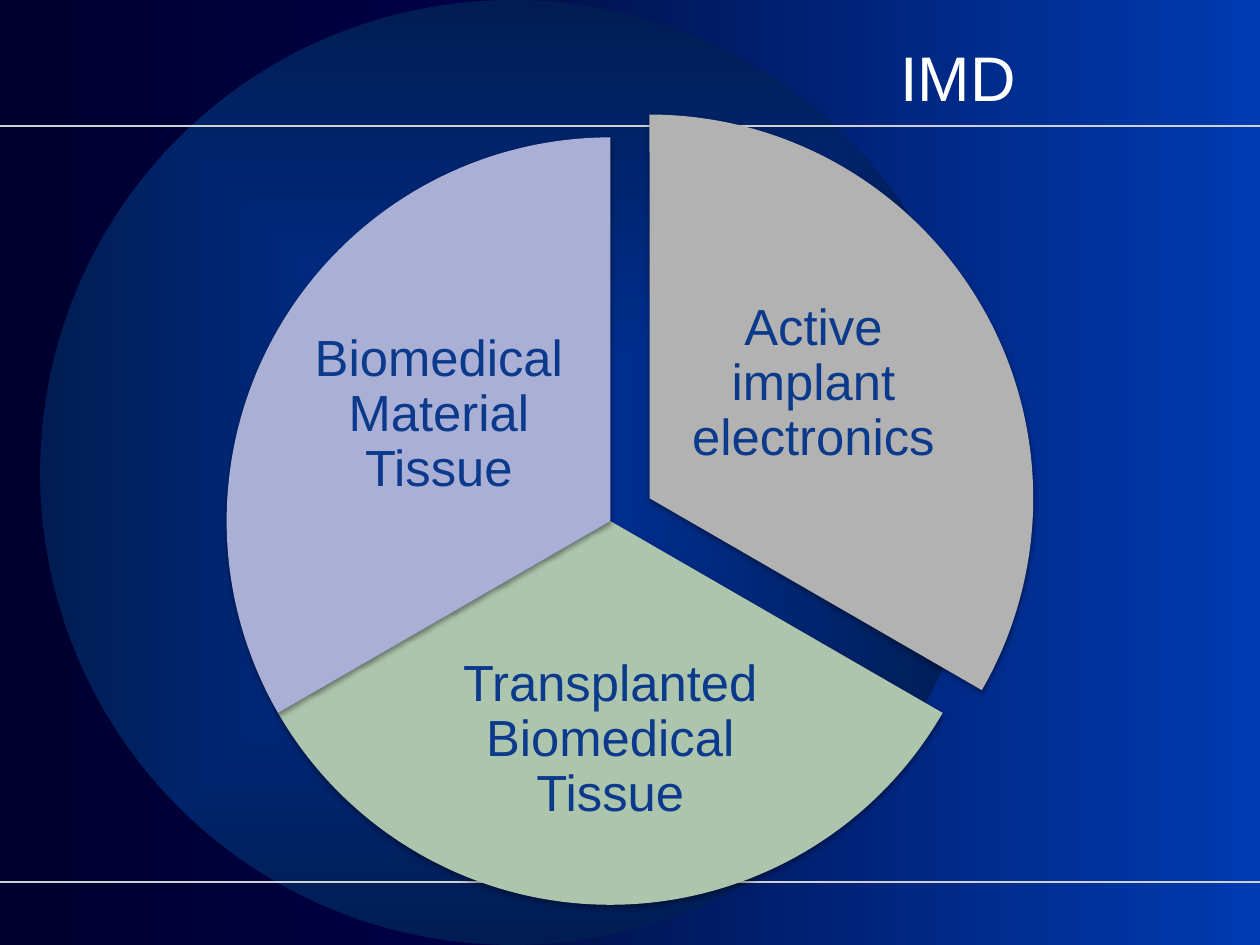
from lxml import etree
from pptx import Presentation
from pptx.dml.color import RGBColor
from pptx.enum import shapes, text
from pptx.oxml import ns, parse_xml
from pptx.util import Cm, Pt

COLORS = {
    "night_start": "00002E", "night_end": "000072",
    "band_start": "00104A", "band_end": "003BB2",
    "disc_core": "0033A0", "disc_rim": "001C52",
    "rule": "D1D1D1", "title": "FFFFFF", "label": "0B398B",
    "grey": "B2B2B2", "green": "ADC5AD", "lilac": "AAAFD5",
}
SHADOW = (
    f'<a:effectLst {ns.nsdecls("a")}>'
    '<a:outerShdw blurRad="39370" dist="20320" dir="5400000" rotWithShape="0">'
    '<a:srgbClr val="000000"><a:alpha val="38000"/></a:srgbClr>'
    '</a:outerShdw></a:effectLst>'
)
CENTRE_GRADIENT = (
    f'<a:path {ns.nsdecls("a")} path="shape">'
    '<a:fillToRect l="50000" t="50000" r="50000" b="50000"/></a:path>'
)


def color(name):
    """Return the named colour."""
    return RGBColor.from_string(COLORS[name])


def fill_gradient(fill, start, end):
    """Fill from left to right between two named colours."""
    fill.gradient()
    fill.gradient_angle = 0
    for stop, name in zip(fill.gradient_stops, (start, end)):
        stop.color.rgb = color(name)


def add_plain(parent, kind, box):
    """Add a preset shape without line or shadow."""
    shape = parent.add_shape(kind, *map(Cm, box))
    shape.shadow.inherit = False
    shape.line.fill.background()
    return shape


def add_text(parent, box, words, size, name, align, inset=None):
    """Add a wrapped, vertically centred text box."""
    frame = parent.add_textbox(*map(Cm, box)).text_frame
    frame.word_wrap = True
    frame.vertical_anchor = text.MSO_ANCHOR.MIDDLE
    if inset is not None:
        frame.margin_left = frame.margin_right = Cm(inset)
        frame.margin_top = frame.margin_bottom = Cm(inset)
    frame.text = words
    para = frame.paragraphs[0]
    para.alignment = align
    font = para.runs[0].font
    font.name, font.size = "Arial", Pt(size)
    font.color.rgb = color(name)
    return para


def add_backdrop(page, box):
    """Draw the night gradient, side band, disc and two rules."""
    left, top, width, height = box
    fill_gradient(page.background.fill, "night_start", "night_end")
    band = add_plain(page.shapes, shapes.MSO_SHAPE.RECTANGLE,
                     (left + 10.36, top, width - 10.36, height))
    fill_gradient(band.fill, "band_start", "band_end")
    disc = add_plain(page.shapes, shapes.MSO_SHAPE.OVAL,
                     (left + 0.81, top, height, height))
    fill_gradient(disc.fill, "disc_core", "disc_rim")
    linear = disc._element.spPr.find(".//" + ns.qn("a:lin"))
    linear.getparent().replace(linear, parse_xml(CENTRE_GRADIENT))
    for y in (top + 2.54, top + height - 1.27):
        rule = page.shapes.add_connector(
            shapes.MSO_CONNECTOR.STRAIGHT,
            Cm(left), Cm(y), Cm(left + width), Cm(y))
        rule.line.color.rgb = color("rule")
        rule.line.width = Pt(1)
        etree.SubElement(rule._element.spPr, ns.qn("a:effectLst"))


def add_pie(page, box):
    """Draw three equal sectors with labels, the first one pulled out."""
    left, top, size, _ = box
    sectors = [
        ("Active implant electronics", "grey", 270, (0.79, -0.46), (9.2, 2.39, 5.26, 5.16)),
        ("Transplanted Biomedical Tissue", "green", 30, (0, 0), (4.24, 9.75, 6.99, 4.8)),
        ("Biomedical Material Tissue", "lilac", 150, (0, 0), (1.65, 3.02, 5.26, 5.16)),
    ]
    group = page.shapes.add_group_shape()
    for words, name, start, (dx, dy), (x, y, width, height) in sectors:
        start = 90 if name == "lilac" else start
        start = 150 if name == "lilac" else start
        sector = add_plain(group.shapes, shapes.MSO_SHAPE.PIE,
                           (left + dx, top + dy, size, size))
        sector.adjustments[0] = start * 0.6
        sector.adjustments[1] = (start + 120) % 360 * 0.6
        sector.fill.solid()
        sector.fill.fore_color.rgb = color(name)
        properties = sector._element.spPr
        properties.replace(properties.find(ns.qn("a:effectLst")), parse_xml(SHADOW))
        para = add_text(group.shapes, (left + x, top + y, width, height), words,
                        29, "label", text.PP_ALIGN.CENTER, 0.1)
        para.line_spacing = 0.9


def main():
    """Build and save the slide."""
    deck = Presentation()
    deck.slide_width, deck.slide_height = Cm(25.4), Cm(19.05)
    page = deck.slides.add_slide(deck.slide_layouts[6])
    add_backdrop(page, (0, 0, 25.4, 19.05))
    add_text(page.shapes, (0.84, 0.36, 19.89, 2.34), "IMD", 36, "title",
             text.PP_ALIGN.RIGHT)
    add_pie(page, (4.57, 2.77, 15.47, 15.47))
    deck.save("out.pptx")


if __name__ == "__main__":
    main()
